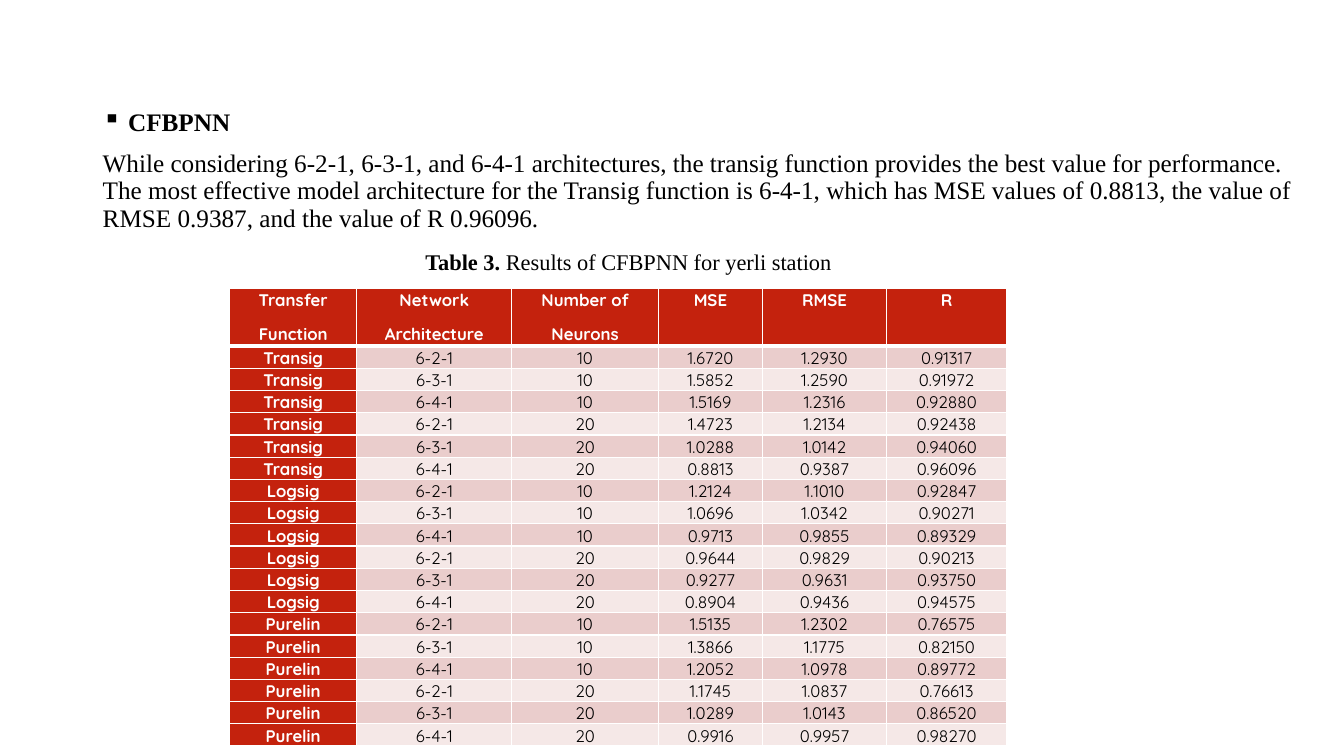
from lxml import etree
from pptx import Presentation
from pptx.dml.color import RGBColor
from pptx.enum.text import PP_ALIGN
from pptx.oxml.ns import qn
from pptx.util import Cm, Pt

CENTER = PP_ALIGN.CENTER
RED, WHITE, BLACK = "C4220D", "FFFFFF", "000000"
BANDS = ["EACDCC", "F5E8E7"]


def color(hex_value):
    return RGBColor.from_string(hex_value)


def add_run(p, text, font, size, hex_value, bold):
    r = p.add_run()
    r.text = text
    r.font.name = font
    r.font.size = Pt(size)
    r.font.bold = bold
    r.font.color.rgb = color(hex_value)


prs = Presentation()
prs.slide_width = Cm(33.87)
prs.slide_height = Cm(19.05)
s = prs.slides.add_slide(prs.slide_layouts[6])

paragraphs = [
    (0, [("CFBPNN", 18, True)]),
    (10, [("While considering 6-2-1, 6-3-1, and 6-4-1 architectures, the transig "
           "function provides the best value for performance. The most effective "
           "model architecture for the Transig function is 6-4-1, which has MSE "
           "values of 0.8813, the value of RMSE 0.9387, and the value of R 0.96096.",
           18, False)]),
    (13.5, [("Table 3. ", 16, True),
            ("Results of CFBPNN for yerli station", 16, False)]),
]
sp = s.shapes.add_textbox(Cm(2.34), Cm(2.64), Cm(30.94), Cm(16.41))
tf = sp.text_frame
tf.word_wrap = True
for i, (space_before, runs) in enumerate(paragraphs):
    p = tf.paragraphs[0] if i == 0 else tf.add_paragraph()
    p.line_spacing = 0.9
    p.space_before = Pt(space_before)
    for text, size, bold in runs:
        add_run(p, text, "Times New Roman", size, BLACK, bold)

heading_pPr = tf.paragraphs[0]._p.get_or_add_pPr()
heading_pPr.set("marL", str(Cm(0.64)))
heading_pPr.set("indent", str(-Cm(0.64)))
etree.SubElement(heading_pPr, qn("a:buChar")).set("char", "▪")
tf.paragraphs[2]._p.get_or_add_pPr().set("marL", str(Cm(8.13)))

header = [["Transfer", "Function"], ["Network", "Architecture"],
          ["Number of", "Neurons"], ["MSE"], ["RMSE"], ["R"]]
functions = ["Transig", "Logsig", "Purelin"]
networks = ["6-2-1", "6-3-1", "6-4-1"]
scores = [
    ("1.6720", "1.2930", "0.91317"),
    ("1.5852", "1.2590", "0.91972"),
    ("1.5169", "1.2316", "0.92880"),
    ("1.4723", "1.2134", "0.92438"),
    ("1.0288", "1.0142", "0.94060"),
    ("0.8813", "0.9387", "0.96096"),
    ("1.2124", "1.1010", "0.92847"),
    ("1.0696", "1.0342", "0.90271"),
    ("0.9713", "0.9855", "0.89329"),
    ("0.9644", "0.9829", "0.90213"),
    ("0.9277", "0.9631", "0.93750"),
    ("0.8904", "0.9436", "0.94575"),
    ("1.5135", "1.2302", "0.76575"),
    ("1.3866", "1.1775", "0.82150"),
    ("1.2052", "1.0978", "0.89772"),
    ("1.1745", "1.0837", "0.76613"),
    ("1.0289", "1.0143", "0.86520"),
    ("0.9916", "0.9957", "0.98270"),
]
rows = [header]
for i, values in enumerate(scores):
    neurons = "10" if i % 6 < 3 else "20"
    row = [functions[i // 6], networks[i % 3], neurons, *values]
    rows.append([[text] for text in row])

col_widths = [3.2, 3.91, 3.69, 2.63, 3.12, 3.03]
table = s.shapes.add_table(len(rows), len(header), Cm(5.79), Cm(7.27),
                           Cm(19.58), Cm(11.53)).table
for column, width in zip(table.columns, col_widths):
    column.width = Cm(width)

for i, row in enumerate(rows):
    table.rows[i].height = Cm(1.45 if i == 0 else 0.56)
    for j, lines in enumerate(row):
        cell = table.cell(i, j)
        cell.margin_left = cell.margin_right = Cm(0.18)
        cell.margin_top = cell.margin_bottom = 0
        tcPr = cell._tc.get_or_add_tcPr()
        for side in "LRTB":
            thick = (i, side) in [(0, "B"), (1, "T")]
            ln = etree.SubElement(tcPr, qn("a:ln" + side))
            ln.set("w", str(Pt(3 if thick else 1)))
            line_fill = etree.SubElement(ln, qn("a:solidFill"))
            etree.SubElement(line_fill, qn("a:srgbClr")).set("val", WHITE)
        is_label = i == 0 or j == 0
        cell.fill.solid()
        cell.fill.fore_color.rgb = color(RED if is_label else BANDS[(i - 1) % 2])
        for k, text in enumerate(lines):
            p = cell.text_frame.paragraphs[0] if k == 0 else cell.text_frame.add_paragraph()
            p.alignment = CENTER
            p.line_spacing = 1.07
            p.space_after = Pt(8)
            add_run(p, text, "Quicksand", 12, WHITE if is_label else BLACK, is_label)

prs.save("out.pptx")
